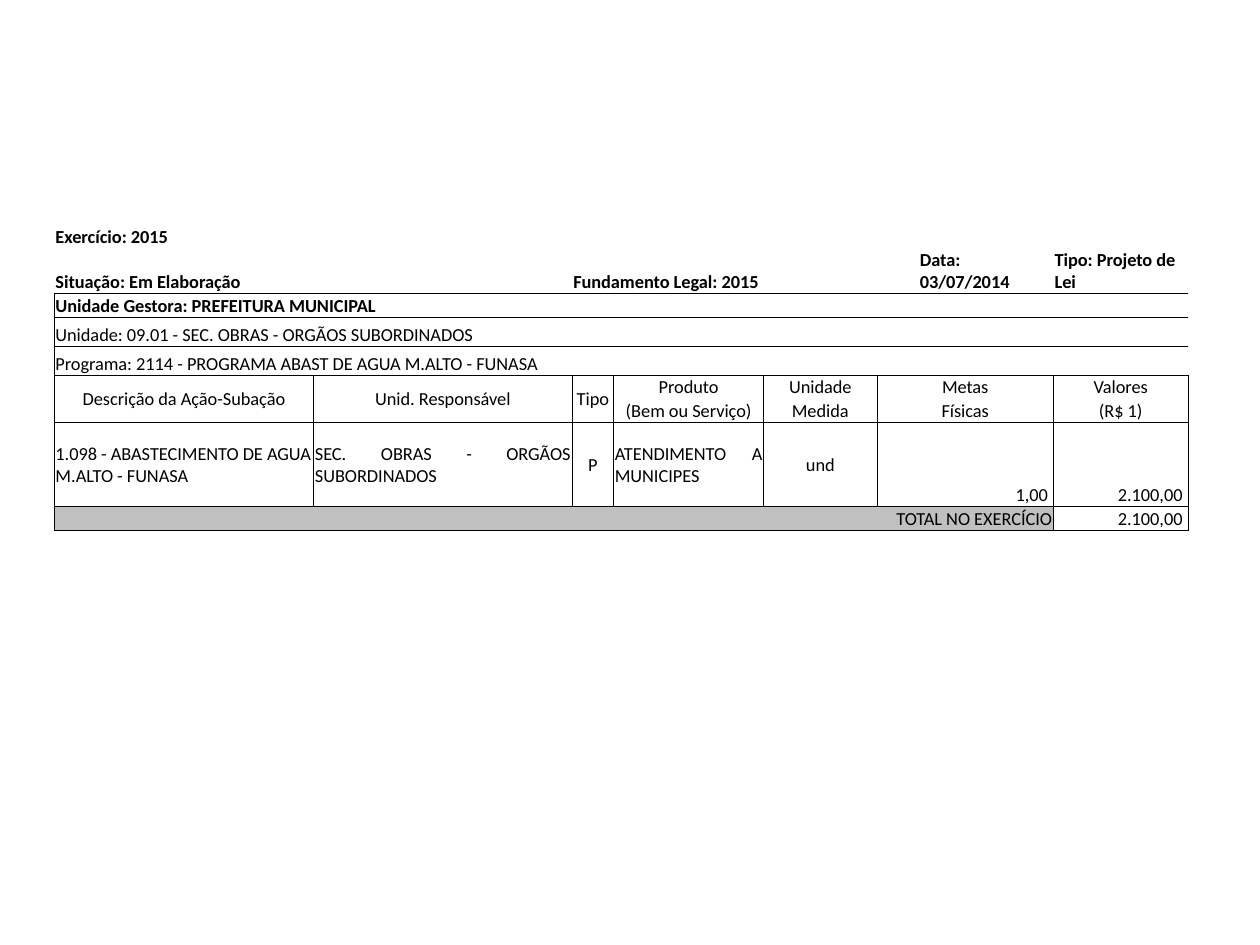
import pptx
import pptx.dml.color
import pptx.enum.text
import pptx.oxml
import pptx.oxml.ns
import pptx.util

Pt = pptx.util.Pt
ALIGN = pptx.enum.text.PP_ALIGN
ANCHOR = pptx.enum.text.MSO_ANCHOR

FONT = "Calibri"
FONT_SIZE = 10.5
BLACK, WHITE, GRAY = "000000", "FFFFFF", "C0C0C0"
COLUMN_WIDTHS = [148.3, 147.6, 23.8, 85.7, 64.8, 23.8, 77, 77]
ROW_HEIGHTS = [11.5, 11.5, 11.5, 16.6, 16.6, 12.2, 12.2, 48.2, 11.5, 11.5, 11.5]

TITLE = {"bold": True, "sides": ""}
SITUATION = {"bold": True, "sides": "B"}
CENTER = {"alignment": ALIGN.CENTER, "anchor": ANCHOR.MIDDLE}
HEADING_TOP = {"alignment": ALIGN.CENTER, "sides": "LRT"}
HEADING_BOTTOM = {"alignment": ALIGN.CENTER, "sides": "LRB"}
MIDDLE = {"anchor": ANCHOR.MIDDLE}
JUSTIFIED = {"alignment": ALIGN.JUSTIFY, "anchor": ANCHOR.MIDDLE}
AMOUNT = {"alignment": ALIGN.RIGHT, "margin_right": 3.2}
TOTAL = {"alignment": ALIGN.RIGHT, "fill": GRAY}

CELLS = [
    (0, 0, 1, 8, "Exercício: 2015", TITLE),
    (1, 0, 1, 2, "Situação: Em Elaboração", SITUATION),
    (1, 2, 1, 4, "Fundamento Legal: 2015", SITUATION),
    (1, 6, 1, 1, "Data: 03/07/2014", SITUATION),
    (1, 7, 1, 1, "Tipo: Projeto de Lei", SITUATION),
    (2, 0, 1, 8, "Unidade Gestora: PREFEITURA MUNICIPAL", {"bold": True}),
    (3, 0, 1, 8, "Unidade: 09.01 - SEC. OBRAS - ORGÃOS SUBORDINADOS", {}),
    (4, 0, 1, 8, "Programa: 2114 - PROGRAMA ABAST DE AGUA M.ALTO - FUNASA", {}),
    (5, 0, 2, 1, "Descrição da Ação-Subação", CENTER),
    (5, 1, 2, 1, "Unid. Responsável", CENTER),
    (5, 2, 2, 1, "Tipo", CENTER),
    (5, 3, 1, 1, "Produto", HEADING_TOP),
    (5, 4, 1, 1, "Unidade", HEADING_TOP),
    (5, 5, 1, 2, "Metas", HEADING_TOP),
    (5, 7, 1, 1, "Valores", HEADING_TOP),
    (6, 3, 1, 1, "(Bem ou Serviço)", HEADING_BOTTOM),
    (6, 4, 1, 1, "Medida", HEADING_BOTTOM),
    (6, 5, 1, 2, "Físicas", HEADING_BOTTOM),
    (6, 7, 1, 1, "(R$ 1)", HEADING_BOTTOM),
    (7, 0, 1, 1, "1.098 - ABASTECIMENTO DE AGUA M.ALTO - FUNASA", MIDDLE),
    (7, 1, 1, 1, "SEC. OBRAS - ORGÃOS SUBORDINADOS", JUSTIFIED),
    (7, 2, 1, 1, "P", CENTER),
    (7, 3, 1, 1, "ATENDIMENTO A MUNICIPES", JUSTIFIED),
    (7, 4, 1, 1, "und", CENTER),
    (7, 5, 1, 2, "1,00", AMOUNT),
    (7, 7, 1, 1, "2.100,00", AMOUNT),
    (8, 0, 1, 7, "TOTAL NO EXERCÍCIO", TOTAL),
    (8, 7, 1, 1, "2.100,00", AMOUNT),
] + [
    (row, column, 1, 1, "", {"sides": "T" if row == 9 else ""})
    for row in (9, 10)
    for column in range(len(COLUMN_WIDTHS))
]


def color(value):
    return pptx.dml.color.RGBColor.from_string(value)


def set_attributes(target, values):
    for name, value in values.items():
        setattr(target, name, value)


def set_borders(cell, sides):
    properties = cell._tc.get_or_add_tcPr()
    for side in "LRTB":
        paint = "<a:noFill/>"
        if side in sides:
            paint = f'<a:solidFill><a:srgbClr val="{BLACK}"/></a:solidFill>'
        properties.append(pptx.oxml.parse_xml(
            f'<a:ln{side} {pptx.oxml.ns.nsdecls("a")} w="{Pt(0.5)}">{paint}</a:ln{side}>'
        ))


def format_cell(cell, sides, style):
    set_borders(cell, sides)
    cell.fill.solid()
    cell.fill.fore_color.rgb = color(style.get("fill", WHITE))
    set_attributes(cell, {
        "margin_left": Pt(0.7),
        "margin_top": Pt(0.7),
        "margin_right": Pt(style.get("margin_right", 0.7)),
        "margin_bottom": 0,
        "vertical_anchor": style.get("anchor", ANCHOR.BOTTOM),
    })
    ending = cell.text_frame.paragraphs[0]._p.get_or_add_endParaRPr()
    ending.set("sz", str(int(FONT_SIZE * 100)))


def write_text(cell, text, style):
    paragraph = cell.text_frame.paragraphs[0]
    paragraph.alignment = style.get("alignment", ALIGN.LEFT)
    run = paragraph.add_run()
    run.text = text
    set_attributes(run.font, {
        "name": FONT, "size": Pt(FONT_SIZE), "bold": style.get("bold", False),
    })
    run.font.color.rgb = color(BLACK)


def fill_block(table, row, column, height, width, text, style):
    sides = style.get("sides", "LRTB")
    for down in range(height):
        for across in range(width):
            edges = {"L": across == 0, "R": across == width - 1,
                     "T": down == 0, "B": down == height - 1}
            outer = [side for side in sides if edges[side]]
            format_cell(table.cell(row + down, column + across), outer, style)
    first = table.cell(row, column)
    if height * width > 1:
        first.merge(table.cell(row + height - 1, column + width - 1))
    if text:
        write_text(first, text, style)


def add_budget_table(slide, left, top, width, height):
    table = slide.shapes.add_table(
        len(ROW_HEIGHTS), len(COLUMN_WIDTHS), Pt(left), Pt(top), Pt(width), Pt(height)
    ).table
    set_attributes(table, {"first_row": False, "horz_banding": False})
    for column, column_width in zip(table.columns, COLUMN_WIDTHS):
        column.width = Pt(column_width)
    for row, row_height in zip(table.rows, ROW_HEIGHTS):
        row.height = Pt(row_height)
    for block in CELLS:
        fill_block(table, *block)


def main():
    presentation = pptx.Presentation()
    set_attributes(presentation, {"slide_width": Pt(720), "slide_height": Pt(540)})
    slide = presentation.slides.add_slide(presentation.slide_layouts[6])
    add_budget_table(slide, 31, 128.2, sum(COLUMN_WIDTHS), sum(ROW_HEIGHTS))
    presentation.save("out.pptx")


if __name__ == "__main__":
    main()
